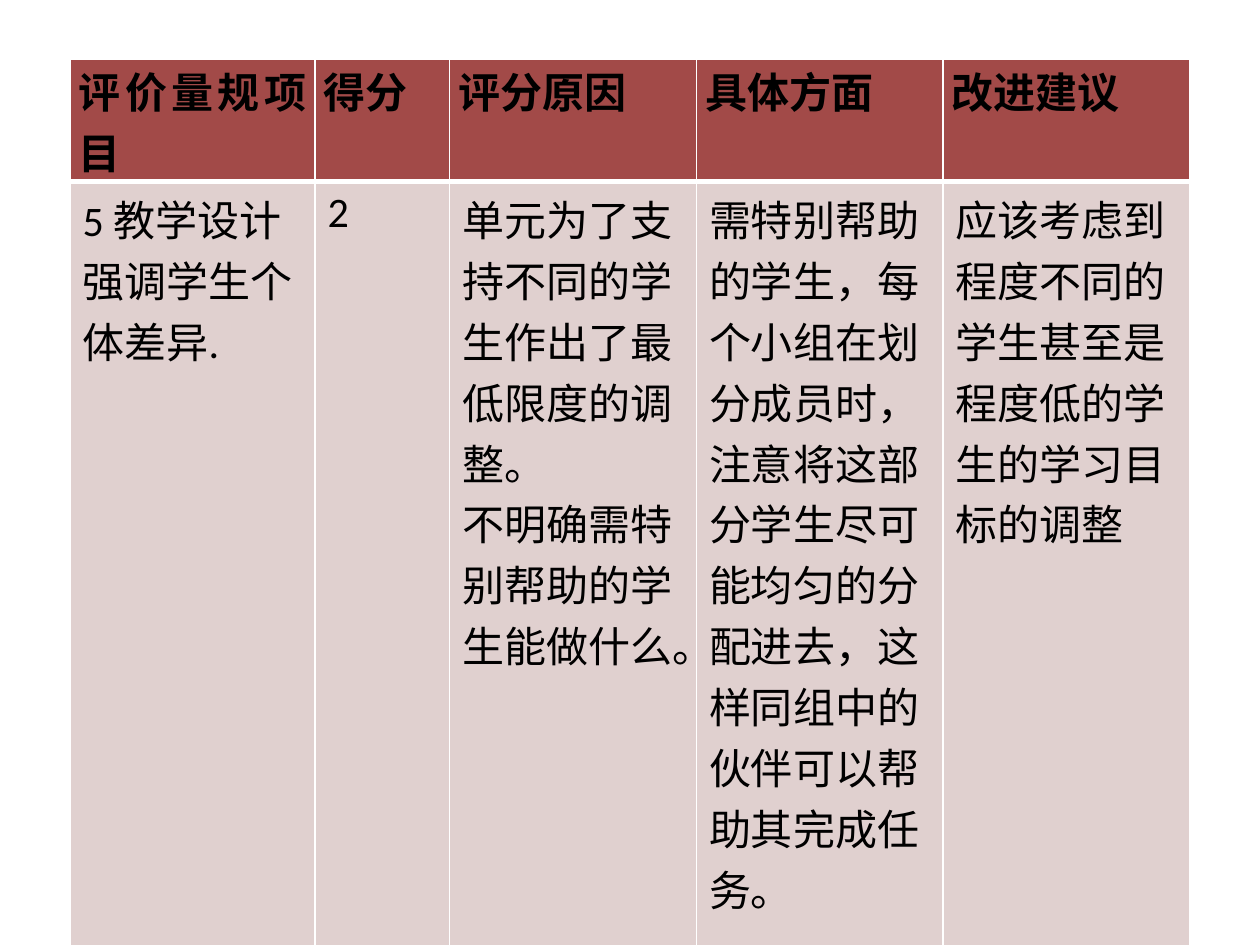
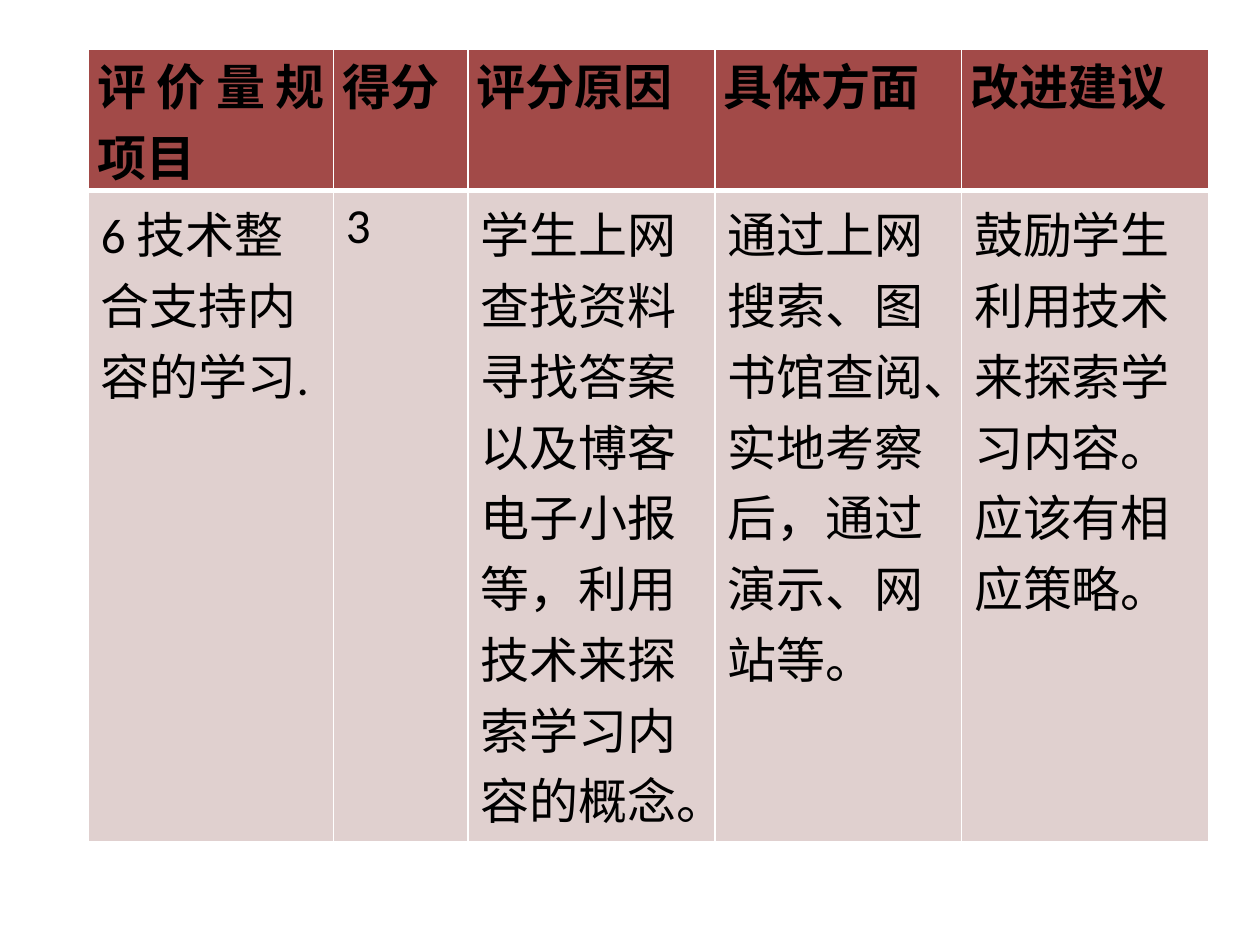
from dataclasses import dataclass

from lxml.etree import SubElement
from pptx import Presentation
from pptx.dml.color import RGBColor as Color
from pptx.enum.text import PP_ALIGN as Align
from pptx.oxml.ns import qn
from pptx.util import Pt


@dataclass(frozen=True)
class Theme:
    font: str = "Calibri"
    text: str = "000000"
    header_fill: str = "A24A48"
    body_fill: str = "E0D0CF"
    border: str = "FFFFFF"
    thin: float = 1
    thick: float = 3


theme = Theme()
column_widths = [140, 77, 141, 141, 141]
headings = ["评价量规项目", "得分", "评分原因", "具体方面", "改进建议"]

# One rubric item per page; each cell is a list of paragraphs
rubric_pages = [
    {
        "left": 40, "top": 34, "row_heights": [69, 437], "size": 24,
        "cells": [
            ["5 教学设计强调学生个体差异."],
            ["2"],
            ["单元为了支持不同的学生作出了最低限度的调整。",
             "不明确需特别帮助的学生能做什么。"],
            ["需特别帮助的学生，每个小组在划分成员时，注意将这部分学生尽可能均匀的分配进去，"
             "这样同组中的伙伴可以帮助其完成任务。"],
            ["应该考虑到程度不同的学生甚至是程度低的学生的学习目标的调整"],
        ],
    },
    {
        "left": 50.5, "top": 28, "row_heights": [80, 372], "size": 28,
        "cells": [
            ["6 技术整合支持内容的学习."],
            ["3"],
            ["学生上网查找资料寻找答案以及博客电子小报等，利用技术来探索学习内容的概念。"],
            ["通过上网搜索、图书馆查阅、实地考察后，通过演示、网站等。"],
            ["鼓励学生利用技术来探索学习内容。应该有相应策略。"],
        ],
    },
]


def set_borders(cell, top, bottom):
    """Draw the four cell borders; they must come before the fill."""
    props = cell._tc.get_or_add_tcPr()
    widths = {"lnL": theme.thin, "lnR": theme.thin, "lnT": top, "lnB": bottom}
    for side, width in widths.items():
        line = SubElement(props, qn(f"a:{side}"), w=str(Pt(width)))
        fill = SubElement(line, qn("a:solidFill"))
        SubElement(fill, qn("a:srgbClr"), val=theme.border)


def fill_cell(cell, paragraphs, size, is_header):
    """Style one cell and write its paragraphs."""
    if is_header:
        set_borders(cell, theme.thin, theme.thick)
        cell.margin_left = cell.margin_right = Pt(5)
        cell.margin_top = cell.margin_bottom = Pt(0)
    else:
        set_borders(cell, theme.thick, theme.thin)
    cell.fill.solid()
    cell.fill.fore_color.rgb = Color.from_string(
        theme.header_fill if is_header else theme.body_fill)

    frame = cell.text_frame
    for number, text in enumerate(paragraphs):
        para = frame.add_paragraph() if number else frame.paragraphs[0]
        para.alignment = Align.JUSTIFY if is_header else Align.LEFT
        span = para.add_run()
        span.text = text
        span.font.name = theme.font
        span.font.size = Pt(size)
        span.font.bold = is_header
        span.font.color.rgb = Color.from_string(theme.text)


# Deck
deck = Presentation()
deck.slide_width, deck.slide_height = Pt(720), Pt(540)
blank_layout = deck.slide_layouts[6]

# Rubric tables
for rubric in rubric_pages:
    page = deck.slides.add_slide(blank_layout)
    rows = [[[heading] for heading in headings], rubric["cells"]]
    table = page.shapes.add_table(
        len(rows), len(headings), Pt(rubric["left"]), Pt(rubric["top"]),
        Pt(sum(column_widths)), Pt(sum(rubric["row_heights"]))).table
    for column, width in zip(table.columns, column_widths):
        column.width = Pt(width)
    for row, height in zip(table.rows, rubric["row_heights"]):
        row.height = Pt(height)
    for row_number, row_cells in enumerate(rows):
        for column_number, paragraphs in enumerate(row_cells):
            fill_cell(table.cell(row_number, column_number), paragraphs,
                      rubric["size"], row_number == 0)

deck.save("out.pptx")
